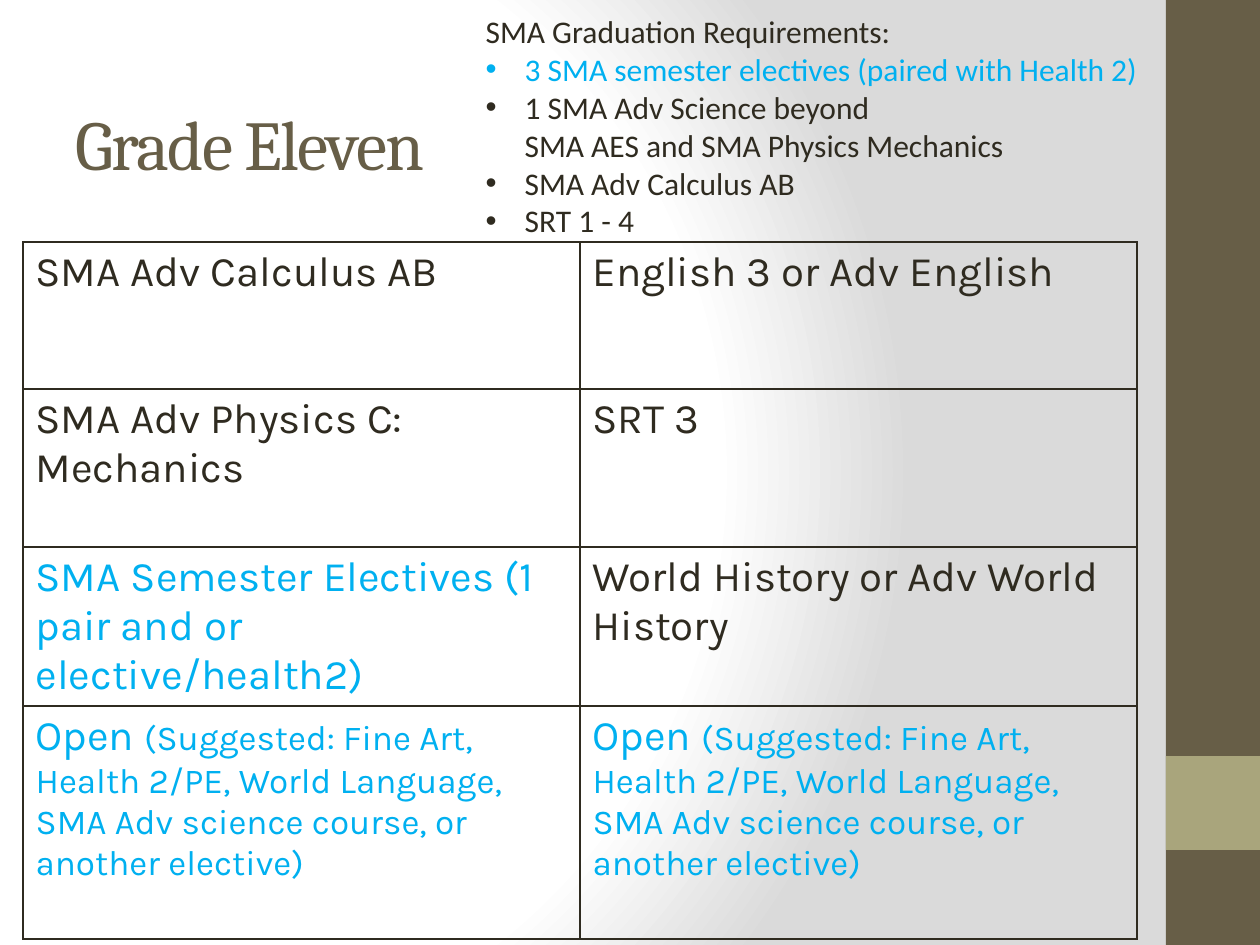
"""Build the Grade Eleven course plan slide."""
import pptx
import pptx.util
import pptx.dml.color
import pptx.enum.shapes
import pptx.enum.text
import pptx.oxml
import pptx.oxml.ns
import lxml.etree

HUES = {"ink": "2F2B20", "blue": "00B0F0", "brown": "675E47", "sage": "A9A57C",
        "white": "FFFFFF", "grey": "DADADA"}
FADE = [(0, "white"), (75, "white"), (100, "grey")]
BARS = [(1166, 0, 94, 945, "brown"), (1166, 756, 94, 94, "sage")]
TITLE = "Grade Eleven"
HEAD = "SMA Graduation Requirements:"
NEEDS = [
    (["3 SMA semester electives (paired with Health 2)"], "blue"),
    (["1 SMA Adv Science beyond ", "SMA AES and SMA Physics Mechanics"], "ink"),
    (["SMA Adv Calculus AB"], "ink"),
    (["SRT 1 - 4"], "ink"),
]
OPEN = ([("Open ", 24),
         ("(Suggested: Fine Art, Health 2/PE, World Language, "
          "SMA Adv science course, or another elective)", 20)], "blue")
ROWS = [
    [([("SMA Adv Calculus AB", 24)], "ink"),
     ([("English 3 or Adv English", 24)], "ink")],
    [([("SMA Adv Physics C: Mechanics", 24)], "ink"),
     ([("SRT 3", 24)], "ink")],
    [([("SMA Semester Electives (1 pair and or elective/health2)", 24)], "blue"),
     ([("World History or Adv World History", 24)], "ink")],
    [OPEN, OPEN],
]
HIGH = [147, 158, 159, 233]
WIDE = 557
SCALE = 914400 / 126


def px(*nums):
    return [round(n * SCALE) for n in nums]


def tint(hue):
    return pptx.dml.color.RGBColor.from_string(HUES[hue])


def node(top, tag, **attrs):
    item = lxml.etree.SubElement(top, pptx.oxml.ns.qn("a:" + tag))
    for key, value in attrs.items():
        item.set(key, str(value))
    return item


def write(para, text, face, size, hue):
    run = para.add_run()
    run.text = text
    run.font.name = face
    run.font.size = pptx.util.Pt(size)
    run.font.color.rgb = tint(hue)
    return run


def place(shape, *box):
    shape.left, shape.top, shape.width, shape.height = px(*box)


def shade(slide):
    fill = slide.background.fill
    fill.gradient()
    grad = slide.background._cSld.find(".//" + pptx.oxml.ns.qn("a:gradFill"))
    for child in list(grad):
        grad.remove(child)
    stops = node(grad, "gsLst")
    for pos, hue in FADE:
        node(node(stops, "gs", pos=pos * 1000), "srgbClr", val=HUES[hue])
    node(node(grad, "path", path="circle"), "fillToRect",
         l=20000, t=50000, r=100000, b=50000)


def add_bars(slide):
    for *box, hue in BARS:
        bar = slide.shapes.add_shape(
            pptx.enum.shapes.MSO_SHAPE.RECTANGLE, *px(*box))
        bar.shadow.inherit = False
        bar.fill.solid()
        bar.fill.fore_color.rgb = tint(hue)
        bar.line.fill.background()


def add_title(slide):
    title = slide.shapes.title
    place(title, 63, 95, 1068, 94)
    frame = title.text_frame
    frame.vertical_anchor = pptx.enum.text.MSO_ANCHOR.MIDDLE
    para = frame.paragraphs[0]
    para.alignment = pptx.enum.text.PP_ALIGN.LEFT
    run = write(para, TITLE, "Cambria", 40, "brown")
    run.font._element.set("spc", "-100")


def add_needs(slide):
    body = slide.placeholders[1]
    place(body, 473, 6, 819, 242)
    frame = body.text_frame
    frame.auto_size = pptx.enum.text.MSO_AUTO_SIZE.SHAPE_TO_FIT_TEXT
    for spot, (lines, hue) in enumerate([([HEAD], "ink")] + NEEDS):
        para = frame.add_paragraph() if spot else frame.paragraphs[0]
        props = para._p.get_or_add_pPr()
        hang = px(39)[0] if spot else 0
        props.set("marL", str(hang))
        props.set("indent", str(-hang))
        if spot:
            node(props, "buFont", typeface="Arial")
            node(props, "buChar", char="•")
        else:
            node(props, "buNone")
        para.space_before = pptx.util.Pt(0)
        for row, line in enumerate(lines):
            if row:
                para.add_line_break()
            write(para, line, "Calibri", 18, hue)


def edge(cell):
    props = cell._tc.get_or_add_tcPr()
    for side in ("lnL", "lnR", "lnT", "lnB"):
        line = node(props, side, w=12700)
        node(node(line, "solidFill"), "srgbClr", val=HUES["ink"])
    cell.fill.background()
    cell.margin_bottom = 0


def add_plan(slide):
    cols = len(ROWS[0])
    box = px(23, 242, WIDE * cols, sum(HIGH))
    table = slide.shapes.add_table(len(ROWS), cols, *box).table
    table.first_row = table.horz_banding = False
    for col in table.columns:
        col.width = px(WIDE)[0]
    for row, high, cells in zip(table.rows, HIGH, ROWS):
        row.height = px(high)[0]
        for cell, (runs, hue) in zip(row.cells, cells):
            edge(cell)
            for text, size in runs:
                write(cell.text_frame.paragraphs[0], text, "Karla", size, hue)


def main():
    deck = pptx.Presentation()
    deck.slide_width, deck.slide_height = px(1260, 945)
    slide = deck.slides.add_slide(deck.slide_layouts[1])
    shade(slide)
    add_bars(slide)
    add_title(slide)
    add_plan(slide)
    add_needs(slide)
    deck.save("out.pptx")


if __name__ == "__main__":
    main()
